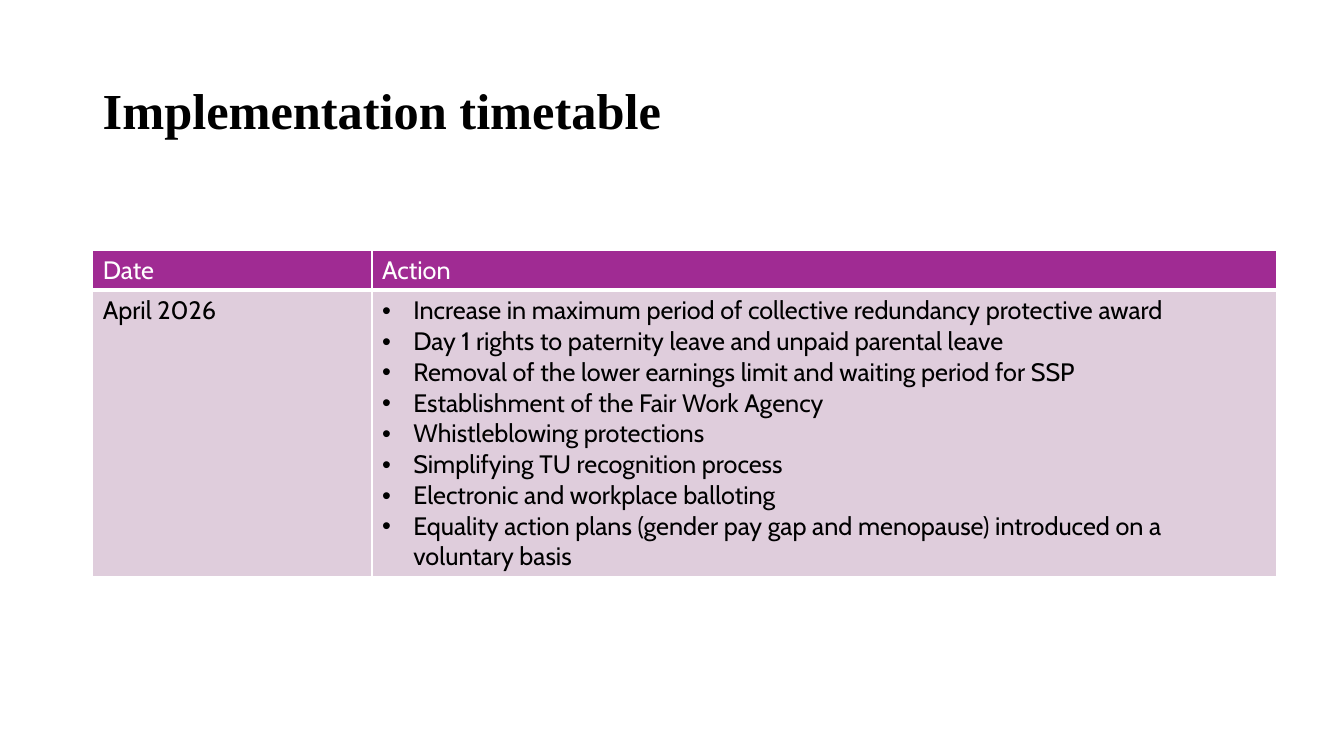
from lxml import etree
from pptx import Presentation
from pptx import util as u
from pptx.dml.color import RGBColor
from pptx.enum import text
from pptx.oxml import ns

BLACK = RGBColor(0x00, 0x00, 0x00)
WHITE = RGBColor(0xFF, 0xFF, 0xFF)
PURPLE = RGBColor(0xA0, 0x2B, 0x93)
MAUVE = RGBColor(0xDF, 0xCD, 0xDC)

LEFT, WIDTH = 0.92, 11.73
COLS = (2.77, 8.97)
ROWS = (0.4, 2.84)
HEAD = ("Date", "Action")
DATE = "April 2026"
ACTIONS = (
    "Increase in maximum period of collective redundancy protective award",
    "Day 1 rights to paternity leave and unpaid parental leave",
    "Removal of the lower earnings limit and waiting period for SSP",
    "Establishment of the Fair Work Agency",
    "Whistleblowing protections",
    "Simplifying TU recognition process",
    "Electronic and workplace balloting",
    "Equality action plans (gender pay gap and menopause) introduced on a voluntary basis",
)
TITLE = {"name": "Times New Roman", "size": u.Pt(36), "bold": True}
BODY = {"name": "Cabin", "size": u.Pt(18), "bold": False}


def style(para, form, color):
    for key, value in form.items():
        setattr(para.font, key, value)
    para.font.color.rgb = color


def bullet(para, indent=0.31):
    props = para._p.get_or_add_pPr()
    props.set("marL", str(u.Inches(indent)))
    props.set("indent", str(-u.Inches(indent)))
    font = etree.SubElement(props, ns.qn("a:buFont"))
    font.set("typeface", "Arial")
    etree.SubElement(props, ns.qn("a:buChar")).set("char", "•")


def border(cell, widths):
    props = cell._tc.get_or_add_tcPr()
    # Border lines come before the fill
    for spot, (side, width) in enumerate(widths.items()):
        line = etree.Element(ns.qn("a:ln" + side), w=str(u.Pt(width)))
        fill = etree.SubElement(line, ns.qn("a:solidFill"))
        etree.SubElement(fill, ns.qn("a:srgbClr")).set("val", str(WHITE))
        props.insert(spot, line)


def add_title(slide, words):
    box = slide.shapes.add_textbox(
        u.Inches(LEFT), u.Inches(0.4), u.Inches(WIDTH), u.Inches(1.45))
    frame = box.text_frame
    frame.word_wrap = True
    frame.vertical_anchor = text.MSO_ANCHOR.MIDDLE
    para = frame.paragraphs[0]
    para.text = words
    para.line_spacing = 0.9
    style(para, TITLE, BLACK)


def fill_cell(cell, lines, back, color, base=1, listed=False):
    cell.fill.solid()
    cell.fill.fore_color.rgb = back
    border(cell, {"L": 1, "R": 1, "T": 1, "B": base})
    cell.text_frame.text = "\n".join(lines)
    for para in cell.text_frame.paragraphs:
        if listed:
            bullet(para)
        style(para, BODY, color)


def add_grid(slide):
    grid = slide.shapes.add_table(
        len(ROWS), len(COLS), u.Inches(LEFT), u.Inches(2.48),
        u.Inches(WIDTH), u.Inches(sum(ROWS))).table
    for col, width in zip(grid.columns, COLS):
        col.width = u.Inches(width)
    for row, height in zip(grid.rows, ROWS):
        row.height = u.Inches(height)
    # Header row
    for col, label in enumerate(HEAD):
        fill_cell(grid.cell(0, col), [label], PURPLE, WHITE, base=3)
    # Date and its actions
    fill_cell(grid.cell(1, 0), [DATE], MAUVE, BLACK)
    fill_cell(grid.cell(1, 1), ACTIONS, MAUVE, BLACK, listed=True)


def main():
    deck = Presentation()
    deck.slide_width = u.Inches(13.33)
    deck.slide_height = u.Inches(7.5)
    slide = deck.slides.add_slide(deck.slide_layouts[6])
    add_title(slide, "Implementation timetable")
    add_grid(slide)
    deck.save("out.pptx")


if __name__ == "__main__":
    main()
